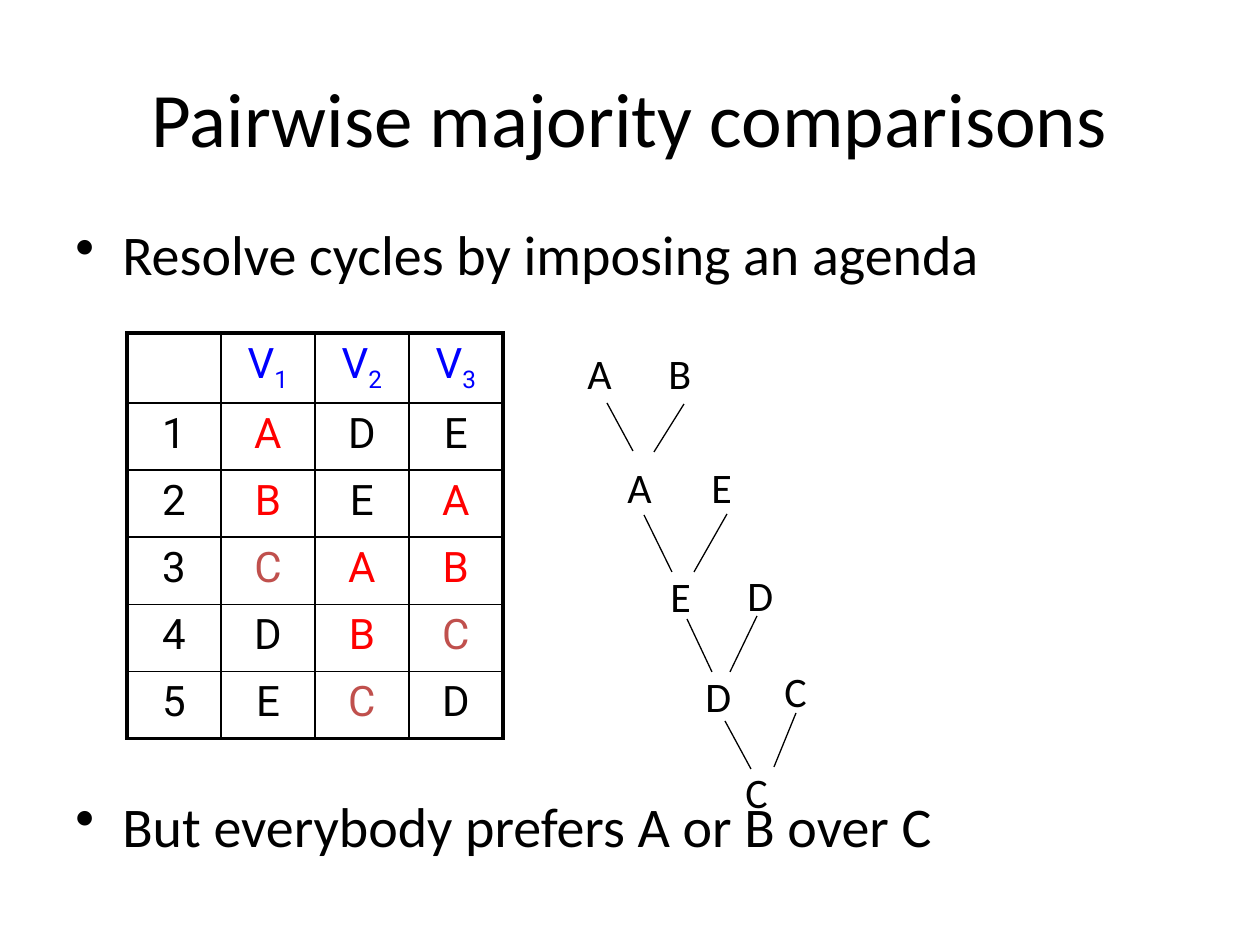
from lxml import etree
from pptx import Presentation
from pptx import util as u
from pptx.dml.color import RGBColor
from pptx.enum import shapes, text
from pptx.oxml import ns

SCALE = 914400 / 126
BLACK, RED, BROWN, BLUE = "000000", "FF0000", "C0504D", "0000FF"
HUES = {"A": RED, "B": RED, "C": BROWN}


def px(n):
    return u.Emu(round(n * SCALE))


def paint(target, hue):
    target.rgb = RGBColor.from_string(hue)


def style(para, size, face="Calibri", hue=BLACK):
    para.font.size = u.Pt(size)
    para.font.name = face
    paint(para.font.color, hue)


def add_text(slide, x, y, w, h):
    frame = slide.shapes.add_textbox(px(x), px(y), px(w), px(h)).text_frame
    frame.word_wrap = True
    return frame


def add_title(slide, x, y, w, h, words):
    frame = add_text(slide, x, y, w, h)
    frame.vertical_anchor = text.MSO_ANCHOR.MIDDLE
    para = frame.paragraphs[0]
    para.text = words
    para.alignment = text.PP_ALIGN.CENTER
    style(para, 44)


def add_points(slide, x, y, w, h, points, gap):
    frame = add_text(slide, x, y, w, h)
    for i, words in enumerate(points):
        para = frame.add_paragraph() if i else frame.paragraphs[0]
        para.text = words
        para.line_spacing = 0.9
        if i:
            para.space_before = u.Pt(gap)
        style(para, 32)
        # Hanging bullet, placed ahead of the default run properties
        props = para._p.get_or_add_pPr()
        props.set("marL", str(px(47)))
        props.set("indent", str(-px(47)))
        bullet = etree.Element(ns.qn("a:buChar"), char="•")
        props.find(ns.qn("a:defRPr")).addprevious(bullet)


def add_border(cell, sides):
    props = cell._tc.get_or_add_tcPr()
    for i, (side, width) in enumerate(sides.items()):
        line = etree.Element(ns.qn("a:ln" + side), w=str(u.Pt(width)))
        fill = etree.SubElement(line, ns.qn("a:solidFill"))
        etree.SubElement(fill, ns.qn("a:srgbClr"), val=BLACK)
        props.insert(i, line)


def add_votes(slide, x, y, w, h, ranks):
    rows, cols = len(ranks) + 1, len(ranks[0]) + 1
    table = slide.shapes.add_table(rows, cols, px(x), px(y), px(w), px(h)).table
    table.first_row = table.horz_banding = False
    for col in table.columns:
        col.width = px(w / cols)
    for row in table.rows:
        row.height = px(h / rows)
    for r in range(rows):
        for c in range(cols):
            cell = table.cell(r, c)
            cell.fill.background()
            add_border(cell, {
                "L": 1 if c else 2.25,
                "R": 1 if c < cols - 1 else 2.25,
                "T": 1 if r else 2.25,
                "B": 1 if r < rows - 1 else 2.25,
            })
            para = cell.text_frame.paragraphs[0]
            para.alignment = text.PP_ALIGN.CENTER
            hue = BLACK
            if r and c:
                para.text = ranks[r - 1][c - 1]
                hue = HUES.get(para.text, BLACK)
            elif r:
                para.text = str(r)
            elif c:
                hue = BLUE
                para.add_run().text = "V"
                sub = para.add_run()
                sub.text = str(c)
                sub._r.get_or_add_rPr().set("baseline", "-25000")
            style(para, 24, "Roboto", hue)


def add_agenda(slide, x, y, names, edges):
    for name, dx, dy in names:
        frame = add_text(slide, x + dx, y + dy, 54, 63)
        frame.word_wrap = False
        frame.auto_size = text.MSO_AUTO_SIZE.SHAPE_TO_FIT_TEXT
        frame.text = name
        style(frame.paragraphs[0], 24)
    for x1, y1, x2, y2 in edges:
        line = slide.shapes.add_connector(
            shapes.MSO_CONNECTOR.STRAIGHT,
            px(x + x1), px(y + y1), px(x + x2), px(y + y2))
        paint(line.line.color, BLACK)
        line.line.width = u.Pt(0.75)
        etree.SubElement(line._element.spPr, ns.qn("a:effectLst"))


def main():
    deck = Presentation()
    deck.slide_width, deck.slide_height = px(1260), px(945)
    slide = deck.slides.add_slide(deck.slide_layouts[6])

    # Title and bullets
    add_title(slide, 63, 38, 1134, 157, "Pairwise majority comparisons")
    add_points(slide, 63, 221, 1134, 689, [
        "Resolve cycles by imposing an agenda",
        "But everybody prefers A or B over C",
    ], 292)

    # Ranking of each voter, best first
    add_votes(slide, 127, 333, 376, 403, ["ADE", "BEA", "CAB", "DBC", "ECD"])

    # Agenda tree: each pair meets in its winner
    names = [
        ("A", 0, 0), ("B", 81, 0),
        ("A", 40, 114), ("E", 124, 114),
        ("E", 83, 223), ("D", 160, 222),
        ("D", 118, 323), ("C", 197, 318),
        ("C", 158, 419),
    ]
    edges = [
        (32, 62, 58, 110), (109, 63, 79, 111),
        (69, 174, 97, 231), (152, 173, 119, 231),
        (112, 278, 137, 331), (182, 275, 155, 331),
        (150, 380, 176, 428), (221, 372, 199, 426),
    ]
    add_agenda(slide, 575, 341, names, edges)
    deck.save("out.pptx")


if __name__ == "__main__":
    main()
